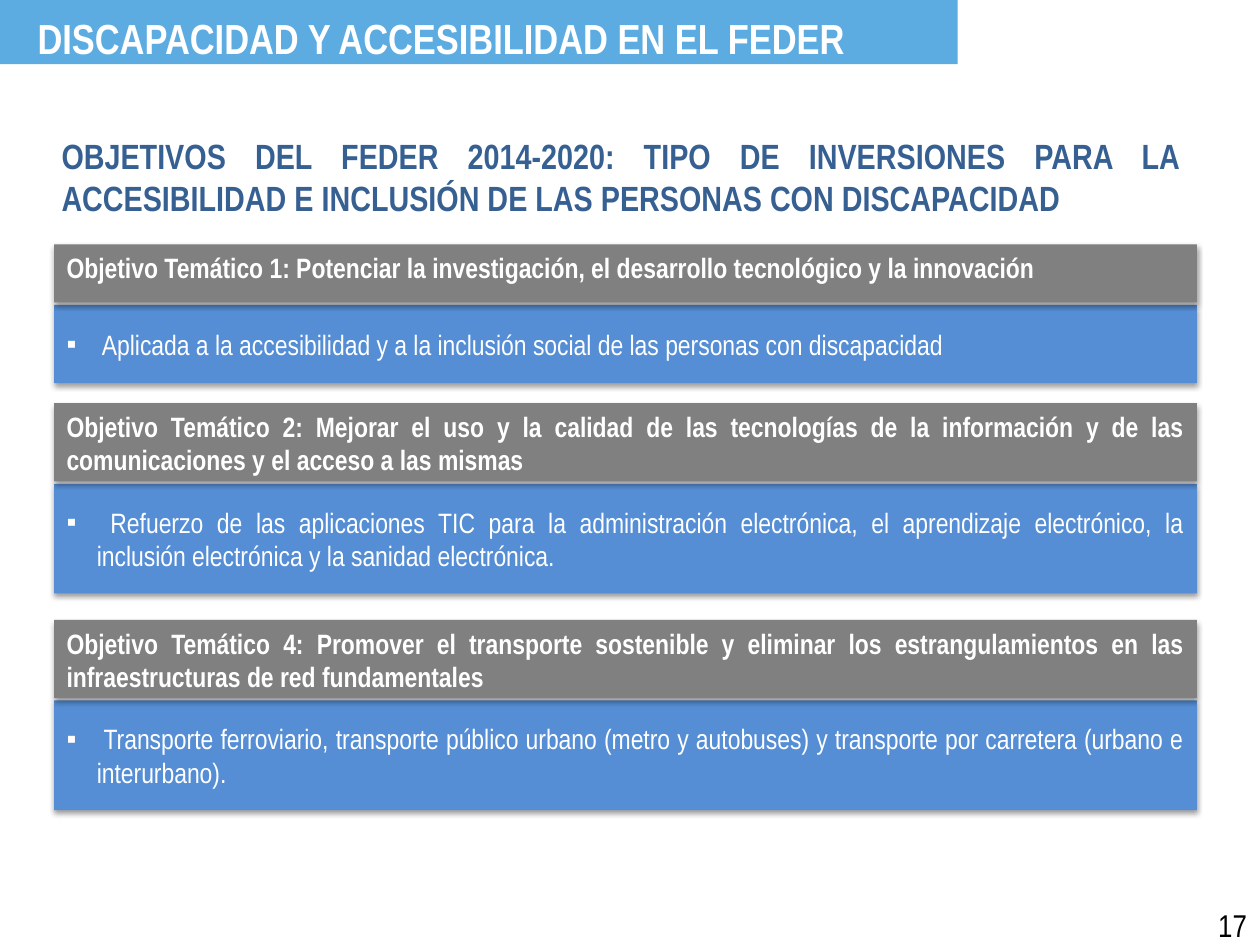
"""Build the slide on disability and accessibility objectives in the FEDER."""
from lxml.etree import SubElement
from pptx import Presentation
from pptx.dml.color import RGBColor
from pptx.enum.shapes import MSO_SHAPE
from pptx.enum.text import MSO_ANCHOR, PP_ALIGN
from pptx.oxml import parse_xml
from pptx.oxml.ns import nsdecls, qn
from pptx.util import Inches, Pt

SKY = RGBColor(0x5C, 0xAC, 0xE2)
NAVY = RGBColor(0x37, 0x60, 0x92)
BLUE = RGBColor(0x55, 0x8E, 0xD5)
GRAY = RGBColor(0x80, 0x80, 0x80)
WHITE = RGBColor(0xFF, 0xFF, 0xFF)
BLACK = RGBColor(0, 0, 0)
FONT = "Arial Narrow"

TITLE = "DISCAPACIDAD Y ACCESIBILIDAD EN EL FEDER"
HEADING = ("OBJETIVOS DEL FEDER 2014-2020: TIPO DE INVERSIONES PARA LA "
           "ACCESIBILIDAD E INCLUSIÓN DE LAS PERSONAS CON DISCAPACIDAD")
PAGE = "17"
OBJECTIVES = [
    (1.94, 0.46, 0.62,
     "Objetivo Temático 1: Potenciar la investigación, el desarrollo tecnológico y la innovación",
     " Aplicada a la accesibilidad y a la inclusión social de las personas con discapacidad"),
    (3.2, 0.62, 0.87,
     "Objetivo Temático 2: Mejorar el uso y la calidad de las tecnologías de la información "
     "y de las comunicaciones y el acceso a las mismas",
     " Refuerzo de las aplicaciones TIC para la administración electrónica, el aprendizaje "
     "electrónico, la inclusión electrónica y la sanidad electrónica."),
    (4.92, 0.62, 0.87,
     "Objetivo Temático 4: Promover el transporte sostenible y eliminar los estrangulamientos "
     "en las infraestructuras de red fundamentales",
     " Transporte ferroviario, transporte público urbano (metro y autobuses) y transporte por "
     "carretera (urbano e interurbano)."),
]
LEFT, WIDTH, GAP, INDENT = 0.43, 9.07, 0.02, 0.24


def write(sp, text, size, color, bold=False, align=PP_ALIGN.JUSTIFY, anchor=MSO_ANCHOR.TOP):
    tf = sp.text_frame
    tf.word_wrap = True
    tf.vertical_anchor = anchor
    p = tf.paragraphs[0]
    p.alignment = align
    r = p.add_run()
    r.text = text
    r.font.name, r.font.size, r.font.bold = FONT, Pt(size), bold
    r.font.color.rgb = color
    return p


def add_text(s, box, *args, **kwargs):
    write(s.shapes.add_textbox(*map(Inches, box)), *args, **kwargs)


def add_bar(s, box, color):
    sp = s.shapes.add_shape(MSO_SHAPE.RECTANGLE, *map(Inches, box))
    sp.shadow.inherit = False
    sp.fill.solid()
    sp.fill.fore_color.rgb = color
    sp.line.fill.background()
    return sp


def add_shadow(sp):
    sp.element.spPr.find(qn("a:effectLst")).append(parse_xml(
        f'<a:outerShdw {nsdecls("a")} blurRad="{Pt(3.1)}" dist="{Pt(1.6)}" dir="5400000" '
        'rotWithShape="0"><a:srgbClr val="000000"><a:alpha val="38000"/></a:srgbClr>'
        '</a:outerShdw>'))


def add_bullet(p):
    pPr = p._p.get_or_add_pPr()
    pPr.set("marL", str(Inches(INDENT)))
    pPr.set("indent", str(-Inches(INDENT)))
    SubElement(pPr, qn("a:buFont"), typeface="Arial")
    SubElement(pPr, qn("a:buChar"), char="▪")


def add_objective(s, top, head_h, body_h, head, body):
    sp = add_bar(s, (LEFT, top + head_h + GAP, WIDTH, body_h), BLUE)
    add_shadow(sp)
    add_bullet(write(sp, body, 16, WHITE, anchor=MSO_ANCHOR.MIDDLE))
    sp = add_bar(s, (LEFT, top, WIDTH, head_h), GRAY)
    add_shadow(sp)
    write(sp, head, 16, WHITE, bold=True)


def main():
    prs = Presentation()
    prs.slide_width, prs.slide_height = Inches(10), Inches(7.5)
    s = prs.slides.add_slide(prs.slide_layouts[6])
    add_bar(s, (0, 0, 7.6, 0.51), SKY)
    add_text(s, (0.39, 1.02, 9.07, 0.84), HEADING, 20, NAVY, bold=True)
    add_text(s, (0.2, 0.05, 7, 0.37), TITLE, 24, WHITE, bold=True)
    for objective in OBJECTIVES:
        add_objective(s, *objective)
    add_text(s, (9.57, 7.14, 0.79, 0.4), PAGE, 18, BLACK, align=PP_ALIGN.LEFT)
    prs.save("out.pptx")


if __name__ == "__main__":
    main()
